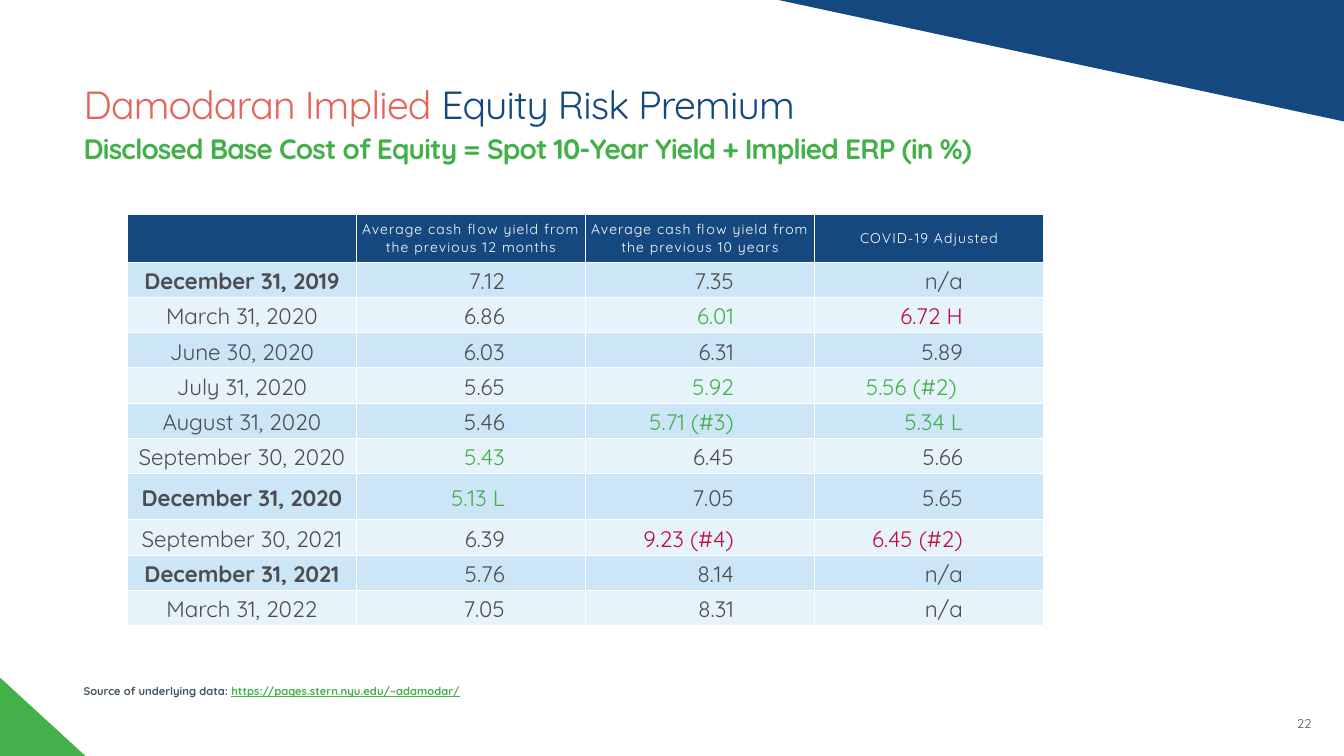
from dataclasses import dataclass

from lxml.etree import SubElement
from pptx import Presentation
from pptx.dml.color import RGBColor
from pptx.enum.text import MSO_ANCHOR as Anchor, MSO_AUTO_SIZE as AutoSize, PP_ALIGN as Align
from pptx.oxml.ns import qn
from pptx.util import Pt


@dataclass(frozen=True)
class Theme:
    """Font, colours and type sizes of the slide."""
    font: str = "Quicksand"
    navy: str = "14487F"
    green: str = "43B049"
    coral: str = "E2665C"
    crimson: str = "BF0D3E"
    text: str = "4D4D4F"
    slate: str = "455560"
    white: str = "FFFFFF"
    bands: tuple = ("CCE5F7", "E7F3FB")
    title_size: float = 28
    subtitle_size: float = 20
    body_size: float = 16
    header_size: float = 10
    number_size: float = 9
    source_size: float = 8


THEME = Theme()

HEADERS = (
    "",
    "Average cash flow yield from the previous 12 months",
    "Average cash flow yield from the previous 10 years",
    "COVID-19 Adjusted",
)
LOW, HIGH = THEME.green, THEME.crimson
PREMIUMS = (
    ("December 31, 2019", "7.12", "7.35", "n/a"),
    ("March 31, 2020", "6.86", ("6.01", LOW), ("6.72 H", HIGH)),
    ("June 30, 2020", "6.03", "6.31", "5.89"),
    ("July 31, 2020", "5.65", ("5.92", LOW), ("5.56 (#2) ", LOW)),
    ("August 31, 2020", "5.46", ("5.71 (#3)", LOW), ("5.34 L", LOW)),
    ("September 30, 2020", ("5.43", LOW), "6.45", "5.66"),
    ("December 31, 2020", ("5.13 L", LOW), "7.05", "5.65"),
    ("September 30, 2021", "6.39", ("9.23 (#4)", HIGH), ("6.45 (#2)", HIGH)),
    ("December 31, 2021", "5.76", "8.14", "n/a"),
    ("March 31, 2022", "7.05", "8.31", "n/a"),
)
HEADER_HEIGHT, ROW_HEIGHT, TALL_HEIGHT = 33.8, 25.2, 33
TALL_ROW = 7
COLUMN_WIDTH = 163.6


def style_font(font, size, color, bold=False):
    """Set face, size, colour and weight of a font."""
    font.name = THEME.font
    font.size = Pt(size)
    font.bold = bold
    font.color.rgb = RGBColor.from_string(color)


def add_run(paragraph, text, size, color, bold=False, spacing=0):
    """Append a styled run, with character spacing in points."""
    run = paragraph.add_run()
    run.text = text
    style_font(run.font, size, color, bold)
    if spacing:
        run._r.get_or_add_rPr().set("spc", str(round(spacing * 100)))
    return run


def add_corner(slide, points, color):
    """Draw a filled triangle in a corner of the slide."""
    start, *others = [(Pt(x), Pt(y)) for x, y in points]
    builder = slide.shapes.build_freeform(*start, scale=1.0)
    builder.add_line_segments(others, close=True)
    shape = builder.convert_to_shape()
    shape.shadow.inherit = False
    shape.fill.solid()
    shape.fill.fore_color.rgb = RGBColor.from_string(color)
    shape.line.fill.background()


def add_text_box(slide, left, top, width, height):
    """Add a wrapping text box and return its frame."""
    frame = slide.shapes.add_textbox(Pt(left), Pt(top), Pt(width), Pt(height)).text_frame
    frame.word_wrap = True
    return frame


def write_title(slide):
    """Place the title placeholder and write both of its lines."""
    title = slide.shapes.title
    title.left, title.top, title.width, title.height = Pt(52.6), Pt(38.9), Pt(816.5), Pt(93.6)
    frame = title.text_frame
    frame.vertical_anchor = Anchor.MIDDLE
    frame.auto_size = AutoSize.NONE
    paragraph = frame.paragraphs[0]
    paragraph.alignment = Align.LEFT
    paragraph.line_spacing = 1.13
    add_run(paragraph, "Damodaran Implied", THEME.title_size, THEME.coral, spacing=-0.6)
    add_run(paragraph, " Equity Risk Premium", THEME.title_size, THEME.navy, spacing=-0.6)
    paragraph.add_line_break()
    add_run(paragraph, "Disclosed Base Cost of Equity = Spot 10-Year Yield + Implied ERP (in %)",
            THEME.subtitle_size, THEME.green, bold=True, spacing=-0.6)


def format_cell(cell, fill, right_margin=0):
    """Give a cell white borders, a fill and its margins."""
    properties = cell._tc.get_or_add_tcPr()
    for side in ("a:lnL", "a:lnR", "a:lnT", "a:lnB"):
        line = SubElement(properties, qn(side), w=str(Pt(0.75)))
        SubElement(SubElement(line, qn("a:solidFill")), qn("a:srgbClr"), val=THEME.white)
    cell.fill.solid()
    cell.fill.fore_color.rgb = RGBColor.from_string(fill)
    cell.margin_left = cell.margin_top = cell.margin_bottom = 0
    cell.margin_right = Pt(right_margin)
    cell.vertical_anchor = Anchor.MIDDLE


def write_header_cell(cell, text):
    """Write a column heading."""
    format_cell(cell, THEME.navy)
    paragraph = cell.text_frame.paragraphs[0]
    paragraph.alignment = Align.CENTER
    if text:
        add_run(paragraph, text, THEME.header_size, THEME.white, spacing=0.8)


def write_body_cell(cell, entry, fill, is_date):
    """Write a date or a premium, coloured when the entry names a colour."""
    text, color = (entry, THEME.text) if isinstance(entry, str) else entry
    format_cell(cell, fill, 0 if is_date else 57.6)
    paragraph = cell.text_frame.paragraphs[0]
    paragraph.text = text
    paragraph.alignment = Align.CENTER if is_date else Align.RIGHT
    paragraph.line_spacing = 1.1
    paragraph.space_before = Pt(0)
    paragraph.space_after = Pt(2)
    style_font(paragraph.font, THEME.body_size, color, bold=text.startswith("December"))


def add_premium_table(slide):
    """Add the table of implied equity risk premiums."""
    heights = [HEADER_HEIGHT] + [ROW_HEIGHT] * len(PREMIUMS)
    heights[TALL_ROW] = TALL_HEIGHT
    table = slide.shapes.add_table(len(heights), len(HEADERS), Pt(91), Pt(153.4),
                                   Pt(COLUMN_WIDTH * len(HEADERS)), Pt(sum(heights))).table
    table.first_row = table.horz_banding = False
    for row, height in zip(table.rows, heights):
        row.height = Pt(height)
    for column, header in enumerate(HEADERS):
        table.columns[column].width = Pt(COLUMN_WIDTH)
        write_header_cell(table.cell(0, column), header)
    for row, entries in enumerate(PREMIUMS):
        for column, entry in enumerate(entries):
            write_body_cell(table.cell(row + 1, column), entry, THEME.bands[row % 2], column == 0)


def add_source(slide):
    """Add the source line below the table."""
    paragraph = add_text_box(slide, 52.6, 484.6, 793.4, 17.3).paragraphs[0]
    paragraph.line_spacing = 1.07
    add_run(paragraph, "Source of underlying data: ", THEME.source_size, THEME.slate, bold=True)
    address = add_run(paragraph, "https://pages.stern.nyu.edu/~adamodar/",
                      THEME.source_size, THEME.green, bold=True)
    address.font.underline = True


def add_slide_number(slide):
    """Add the slide number at the bottom right."""
    frame = add_text_box(slide, 926.6, 508.3, 33.4, 13.7)
    frame.margin_left = frame.margin_top = frame.margin_right = frame.margin_bottom = 0
    frame.vertical_anchor = Anchor.BOTTOM
    paragraph = frame.paragraphs[0]
    paragraph.text = "22"
    style_font(paragraph.font, THEME.number_size, THEME.text)


def main():
    """Build the slide and save it."""
    presentation = Presentation()
    presentation.slide_width, presentation.slide_height = Pt(960), Pt(540)
    slide = presentation.slides.add_slide(presentation.slide_layouts[5])
    add_corner(slide, [(556, 0), (960, 0), (960, 86.8)], THEME.navy)
    add_corner(slide, [(0, 484), (61, 540), (0, 540)], THEME.green)
    write_title(slide)
    add_premium_table(slide)
    add_source(slide)
    add_slide_number(slide)
    presentation.save("out.pptx")


if __name__ == "__main__":
    main()
